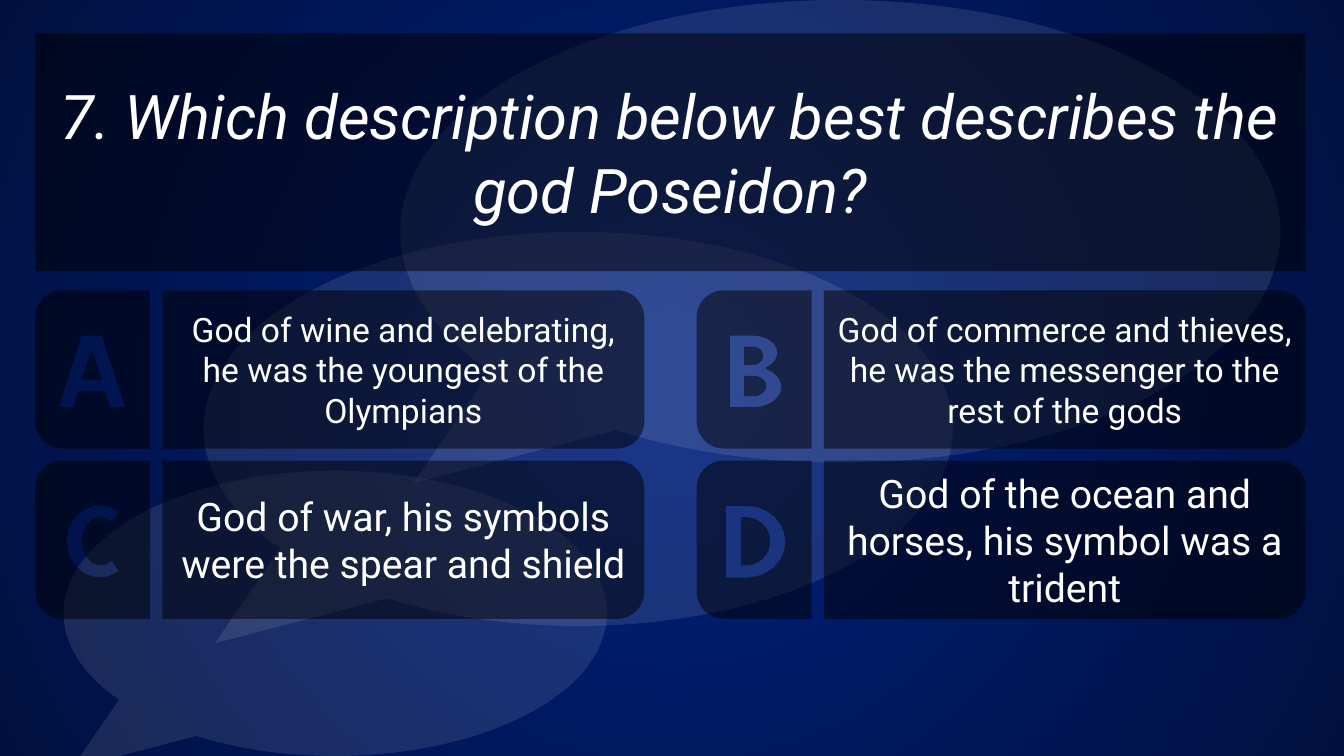
"""Build a quiz slide with one question and four lettered answers."""
from collections import namedtuple
from math import cos, radians, sin

from lxml import etree
from pptx import Presentation
from pptx.dml.color import RGBColor
from pptx.enum.shapes import MSO_SHAPE
from pptx.enum.text import MSO_ANCHOR, MSO_AUTO_SIZE, PP_ALIGN
from pptx.oxml.ns import qn
from pptx.util import Inches, Pt

CALLOUT = MSO_SHAPE.OVAL_CALLOUT
MIDDLE = MSO_ANCHOR.MIDDLE
NO_AUTOFIT = MSO_AUTO_SIZE.NONE
CENTER = PP_ALIGN.CENTER

WHITE = RGBColor(0xFF, 0xFF, 0xFF)
BLACK = RGBColor(0x00, 0x00, 0x00)
NAVY = RGBColor(0x00, 0x21, 0x7F)
MIDNIGHT = RGBColor(0x00, 0x10, 0x40)

FONT = "Roboto"
PANEL_OPACITY = 50
BUBBLE_OPACITY = 10
CORNER = 0.27
ARC_STEPS = 12
TITLE_ONLY_LAYOUT = 5

Box = namedtuple("Box", "left top width height")

QUESTION = "7. Which description below best describes the god Poseidon?"
QUESTION_BOX = Box(0.35, 0.33, 12.6, 2.36)
ANSWERS_BOX = Box(0.35, 2.88, 12.6, 3.26)
ROW_GAP = 0.12
COLUMN_PITCH = 6.56
TAB_WIDTH = 1.14
ANSWER_OFFSET = 1.26
BUBBLES = [
    Box(0.63, 4.67, 5.39, 2.83),
    Box(2.02, 2.3, 7.43, 3.91),
    Box(3.97, 0, 8.73, 4.59),
]
ANSWERS = [
    ("A", "God of wine and celebrating, he was the youngest of the Olympians", 24),
    ("B", "God of commerce and thieves, he was the messenger to the rest of the gods", 24),
    ("C", "God of war, his symbols were the spear and shield", 28),
    ("D", "God of the ocean and horses, his symbol was a trident", 28),
]


def lengths(box):
    """Return the sides of a box as slide lengths."""
    return [Inches(value) for value in box]


def arc(x, y, radius_x, radius_y, start=-90, end=90):
    """Return points along an elliptical arc around a centre."""
    turns = [radians(start + (end - start) * step / ARC_STEPS) for step in range(ARC_STEPS + 1)]
    return [(x + radius_x * cos(turn), y + radius_y * sin(turn)) for turn in turns]


def bowl(left, top, right, bottom, depth):
    """Return an outline with a straight left side and a round right side."""
    curve = arc(right - depth, (top + bottom) / 2, depth, (bottom - top) / 2)
    return [(left, top), *curve, (left, bottom)]


def letter_outlines(letter):
    """Return the outlines of a block letter within its tab."""
    if letter == "A":
        half = [(0.1, 0.45), (0.33, 1.16), (0.18, 1.16), (0.13, 1)]
        mirrored = [(-x, y) for x, y in reversed(half)]
        outer = [(0.56 + x, y) for x, y in half + mirrored]
        return [outer, [(0.56, 0.59), (0.66, 0.89), (0.46, 0.89)]]
    if letter == "B":
        upper = arc(0.56, 0.62, 0.24, 0.17, -90, 60)
        lower = arc(0.56, 0.96, 0.28, 0.2, -60, 90)
        outer = [(0.33, 0.45), *upper, *lower, (0.33, 1.16)]
        return [outer, bowl(0.47, 0.56, 0.66, 0.74, 0.1), bowl(0.47, 0.85, 0.69, 1.05, 0.12)]
    if letter == "C":
        outer = arc(0.64, 0.8, 0.33, 0.36, -55, -305)
        return [outer + arc(0.65, 0.8, 0.19, 0.24, -305, -55)]
    return [bowl(0.29, 0.45, 0.88, 1.16, 0.38), bowl(0.44, 0.56, 0.73, 1.04, 0.24)]


def paint(shape, color, opacity):
    """Give a shape a translucent fill without a line."""
    shape.fill.solid()
    shape.fill.fore_color.rgb = color
    tone = shape.element.spPr.find(qn("a:solidFill"))[0]
    etree.SubElement(tone, qn("a:alpha"), val=str(opacity * 1000))
    shape.line.fill.background()


def write(shape, text, size, italic=False):
    """Put centred white text in a shape."""
    frame = shape.text_frame
    frame_format = {"word_wrap": True, "auto_size": NO_AUTOFIT, "vertical_anchor": MIDDLE}
    for name, value in frame_format.items():
        setattr(frame, name, value)
    para = frame.paragraphs[0]
    para.alignment = CENTER
    span = para.add_run()
    span.text = text
    span.font.color.rgb = WHITE
    for name, value in {"name": FONT, "size": Pt(size), "italic": italic}.items():
        setattr(span.font, name, value)


def panel_outline(box, rounded_left):
    """Return the points of a panel rounded on one side."""
    center, bottom = box.width - CORNER, box.height
    upper = arc(center, CORNER, CORNER, CORNER, -90, 0)
    lower = arc(center, bottom - CORNER, CORNER, CORNER, 0, 90)
    points = [(0, 0), *upper, *lower, (0, bottom)]
    return [(box.width - x, y) for x, y in points] if rounded_left else points


def add_panel(page, box, rounded_left=False, cutouts=()):
    """Draw a dark panel with optional cutouts."""
    outlines = [
        [(Inches(box.left + x), Inches(box.top + y)) for x, y in outline]
        for outline in (panel_outline(box, rounded_left), *cutouts)
    ]
    builder = page.shapes.build_freeform(*outlines[0][0])
    builder.add_line_segments(outlines[0][1:])
    for outline in outlines[1:]:
        builder.move_to(*outline[0])
        builder.add_line_segments(outline[1:])
    panel = builder.convert_to_shape()
    panel.shadow.inherit = False
    paint(panel, BLACK, PANEL_OPACITY)
    return panel


def add_background(page):
    """Fill the page with a radial blue gradient."""
    fill = page.background.fill
    fill.gradient()
    for stop, color in zip(fill.gradient_stops, (NAVY, MIDNIGHT)):
        stop.color.rgb = color
    gradient = next(page.element.iter(qn("a:gradFill")))
    gradient.remove(gradient.find(qn("a:lin")))
    circle = etree.SubElement(gradient, qn("a:path"), {"path": "circle"})
    etree.SubElement(circle, qn("a:fillToRect"), dict.fromkeys("ltrb", "50000"))


def add_bubbles(page, boxes):
    """Group the pale speech bubbles behind the quiz."""
    group = page.shapes.add_group_shape()
    for box in boxes:
        bubble = group.shapes.add_shape(CALLOUT, *lengths(box))
        bubble.adjustments[0], bubble.adjustments[1] = -0.485, 0.544
        bubble.shadow.inherit = False
        paint(bubble, WHITE, BUBBLE_OPACITY)


def add_question(page, box):
    """Format the title as a rounded question panel."""
    title = page.shapes.title
    for name, value in zip(("left", "top", "width", "height"), lengths(box)):
        setattr(title, name, value)
    geometry = etree.SubElement(title.element.spPr, qn("a:prstGeom"), prst="roundRect")
    etree.SubElement(geometry, qn("a:avLst"))
    paint(title, BLACK, PANEL_OPACITY)
    write(title, QUESTION, 44, italic=True)
    title.element.getparent().append(title.element)


def add_answers(page, box):
    """Lay out the answers in two rows and two columns."""
    height = (box.height - ROW_GAP) / 2
    answer_width = box.width - COLUMN_PITCH - ANSWER_OFFSET
    for index, (letter, text, size) in enumerate(ANSWERS):
        row, column = divmod(index, 2)
        left = box.left + column * COLUMN_PITCH
        top = box.top + row * (height + ROW_GAP)
        answer = add_panel(page, Box(left + ANSWER_OFFSET, top, answer_width, height))
        write(answer, text, size)
        add_panel(page, Box(left, top, TAB_WIDTH, height), True, letter_outlines(letter))


def main():
    """Build and save the deck."""
    deck = Presentation()
    deck.slide_width, deck.slide_height = Inches(13.33), Inches(7.5)
    page = deck.slides.add_slide(deck.slide_layouts[TITLE_ONLY_LAYOUT])
    add_background(page)
    add_bubbles(page, BUBBLES)
    add_answers(page, ANSWERS_BOX)
    add_question(page, QUESTION_BOX)
    deck.save("out.pptx")


if __name__ == "__main__":
    main()
